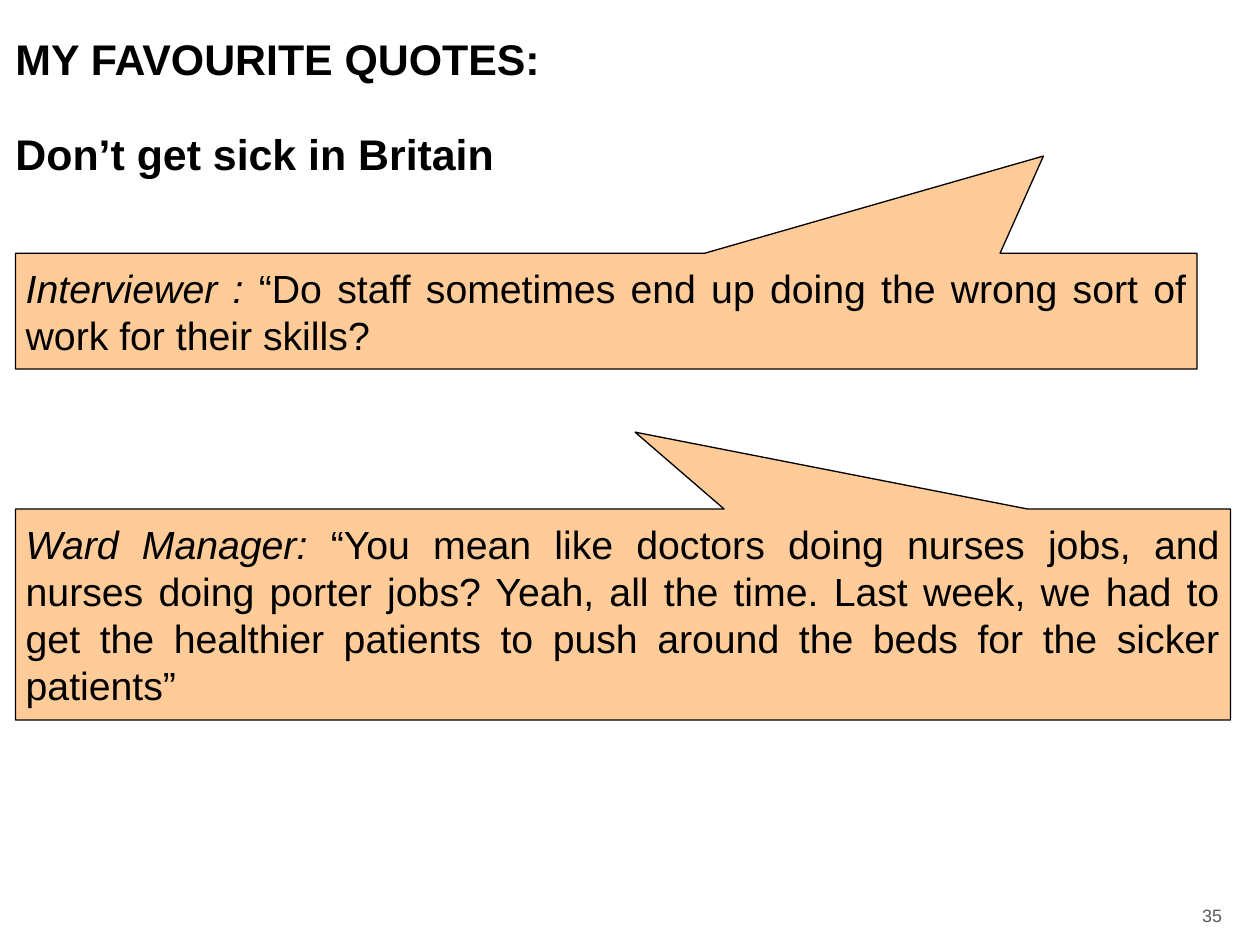
from pptx import Presentation
from pptx.dml.color import RGBColor
from pptx.enum.shapes import MSO_SHAPE
from pptx.enum.text import MSO_ANCHOR, MSO_AUTO_SIZE, PP_ALIGN
from pptx.util import Inches, Pt

CALLOUT = MSO_SHAPE.RECTANGULAR_CALLOUT
TOP, MIDDLE = MSO_ANCHOR.TOP, MSO_ANCHOR.MIDDLE
LEFT, JUSTIFY = PP_ALIGN.LEFT, PP_ALIGN.JUSTIFY
NO_FIT = MSO_AUTO_SIZE.NONE
COLORS = {"text": "000000", "bubble": "FFCC99", "number": "59595A"}
EDGE = 0.12  # shared left edge


def color(name):
    return RGBColor.from_string(COLORS[name])


def write(shape, runs, size, ink="text", align=LEFT, anchor=TOP, pads=(0, 0, 0, 0), wrap=True):
    """Fill a shape with one paragraph of (text, bold, italic) runs."""
    frame = shape.text_frame
    frame.auto_size = NO_FIT
    frame.word_wrap = wrap
    frame.vertical_anchor = anchor
    (frame.margin_left, frame.margin_top,
     frame.margin_right, frame.margin_bottom) = [Inches(pad) for pad in pads]
    para = frame.paragraphs[0]
    para.alignment = align
    for text, bold, italic in runs:
        run = para.add_run()
        run.text = text
        font = run.font
        font.name, font.size = "Arial", Pt(size)
        font.bold, font.italic = bold, italic
        font.color.rgb = color(ink)


deck = Presentation()
deck.slide_width, deck.slide_height = Inches(9.8), Inches(7.35)
slide = deck.slides.add_slide(deck.slide_layouts[5])
shapes = slide.shapes

# Title and subtitle
title = shapes.title
title.left, title.top = Inches(EDGE), Inches(0.2)
title.width, title.height = Inches(9.56), Inches(0.5)
subtitle = shapes.add_textbox(Inches(EDGE), Inches(0.94), Inches(7.18), Inches(0.5))
for box, text in ((title, "MY FAVOURITE QUOTES:"), (subtitle, "Don’t get sick in Britain")):
    write(box, [(text, True, False)], 24, pads=(0, 0.05, 0.1, 0.05))

# Speech bubbles: top, width, height, tail tip, speaker, quote
quotes = [
    (1.97, 9.19, 0.9, (0.37, -1.34), "Interviewer :",
     " “Do staff sometimes end up doing the wrong sort of work for their skills?"),
    (3.96, 9.45, 1.64, (0.01, -0.865), "Ward Manager:",
     " “You mean like doctors doing nurses jobs, and nurses doing porter jobs? "
     "Yeah, all the time. Last week, we had to get the healthier patients to push "
     "around the beds for the sicker patients”"),
]
for top, width, height, tip, speaker, quote in quotes:
    bubble = shapes.add_shape(CALLOUT, Inches(EDGE), Inches(top), Inches(width), Inches(height))
    bubble.adjustments[0], bubble.adjustments[1] = tip
    bubble.shadow.inherit = False
    bubble.fill.solid()
    bubble.fill.fore_color.rgb = color("bubble")
    bubble.line.color.rgb = color("text")
    bubble.line.width = Pt(0.75)
    write(bubble, [(speaker, False, True), (quote, False, False)], 22,
          align=JUSTIFY, anchor=MIDDLE, pads=(0.08,) * 4)

# Page number
number = shapes.add_textbox(Inches(9.35), Inches(7.04), Inches(0.21), Inches(0.17))
write(number, [("35", False, False)], 10, ink="number", wrap=False)

deck.save("out.pptx")
